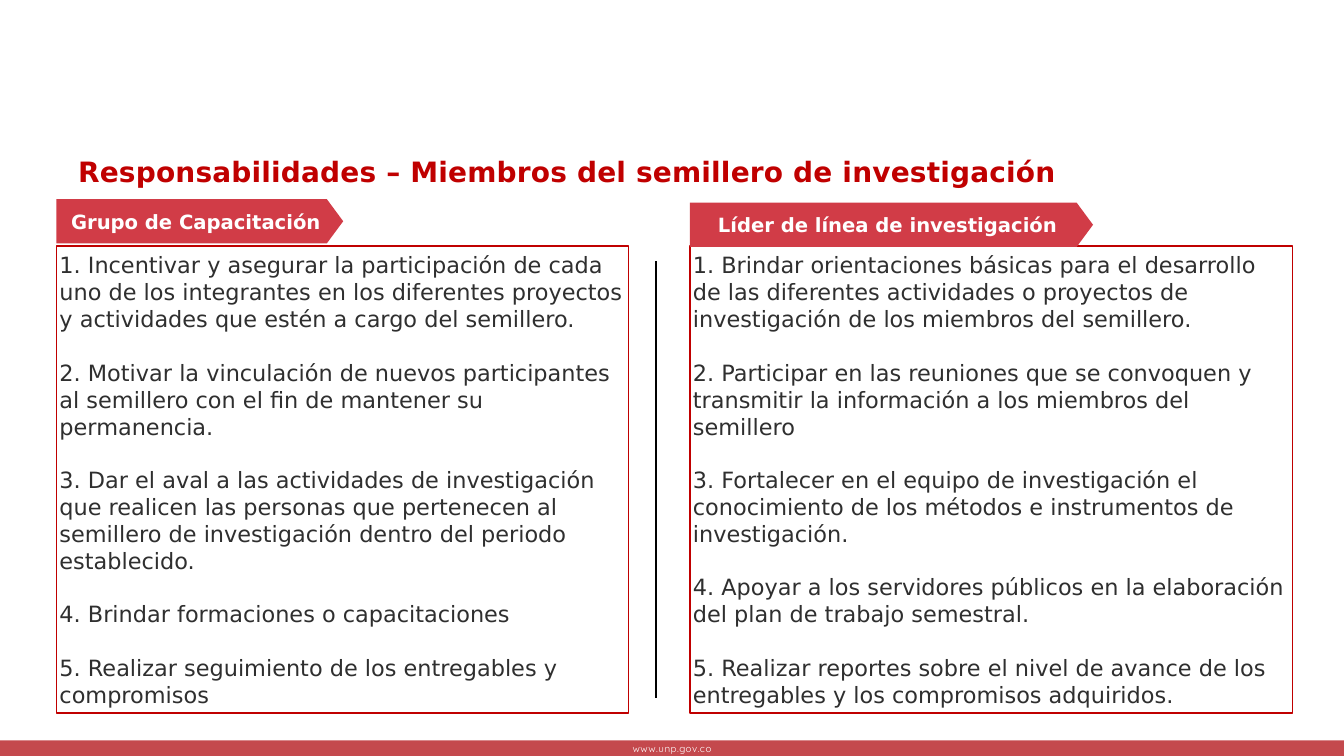
from dataclasses import dataclass

from pptx import Presentation
from pptx.dml.color import RGBColor
from pptx.enum.shapes import MSO_CONNECTOR, MSO_SHAPE
from pptx.enum.text import MSO_ANCHOR, MSO_AUTO_SIZE, PP_ALIGN
from pptx.oxml.ns import qn
from pptx.util import Pt
from lxml import etree

RECT, PENTAGON = MSO_SHAPE.RECTANGLE, MSO_SHAPE.PENTAGON
STRAIGHT = MSO_CONNECTOR.STRAIGHT
TOP, MIDDLE = MSO_ANCHOR.TOP, MSO_ANCHOR.MIDDLE
LEFT, CENTER, JUSTIFY = PP_ALIGN.LEFT, PP_ALIGN.CENTER, PP_ALIGN.JUSTIFY
NO_AUTOSIZE = MSO_AUTO_SIZE.NONE

PX = 9144  # 100 px to the inch
FONT = "DejaVu Sans"
COLORS = {
    "title": "C00000",
    "border": "C00000",
    "tag": "D13C47",
    "footer": "C4494D",
    "body": "2F2F2F",
    "white": "FFFFFF",
    "black": "000000",
}
BOX_TOP, BOX_HEIGHT, TAG_HEIGHT = 488, 927, 88


@dataclass
class Column:
    left: int
    width: int
    tag_top: int
    tag_width: int
    heading: str
    duties: list[str]


COLUMNS = [
    Column(112, 1135, 395, 569, "Grupo de Capacitación", [
        "Incentivar y asegurar la participación de cada uno de los integrantes "
        "en los diferentes proyectos y actividades que estén a cargo del semillero.",
        "Motivar la vinculación de nuevos participantes al semillero con el fin "
        "de mantener su permanencia.",
        "Dar el aval a las actividades de investigación que realicen las personas "
        "que pertenecen al semillero de investigación dentro del periodo establecido.",
        "Brindar formaciones o capacitaciones",
        "Realizar seguimiento de los entregables y compromisos",
    ]),
    Column(1369, 1196, 402, 800, "Líder de línea de investigación", [
        "Brindar orientaciones básicas para el desarrollo de las diferentes "
        "actividades o proyectos de investigación de los miembros del semillero.",
        "Participar en las reuniones que se convoquen y transmitir la información "
        "a los miembros del semillero",
        "Fortalecer en el equipo de investigación el conocimiento de los métodos "
        "e instrumentos de investigación.",
        "Apoyar a los servidores públicos en la elaboración del plan de trabajo "
        "semestral.",
        "Realizar reportes sobre el nivel de avance de los entregables y los "
        "compromisos adquiridos.",
    ]),
]


def px(*lengths: int) -> list[int]:
    return [n * PX for n in lengths]


def rgb(name: str) -> RGBColor:
    return RGBColor.from_string(COLORS[name])


def write(sp, *paragraphs: str, size: int, color: str, font: str = FONT,
          bold: bool = False, align=LEFT, anchor=MIDDLE, inset: int = 6,
          wrap: bool = True, gap: int = 0, tracking: int = 0,
          line_spacing: int | None = None) -> None:
    """Fill a shape with text; gap is in points, tracking in 1/100 point."""
    tf = sp.text_frame
    tf.auto_size = NO_AUTOSIZE
    tf.word_wrap = wrap
    tf.vertical_anchor = anchor
    tf.margin_left = tf.margin_top = tf.margin_right = tf.margin_bottom = inset * PX
    for i, text in enumerate(paragraphs):
        p = tf.add_paragraph() if i else tf.paragraphs[0]
        p.alignment = align
        p.space_before = Pt(gap if i else 0)
        if line_spacing:
            p.line_spacing = Pt(line_spacing)
        r = p.add_run()
        r.text = text
        r.font.name, r.font.size, r.font.bold = font, Pt(size), bold
        r.font.color.rgb = rgb(color)
        if tracking:
            r.font._element.set("spc", str(tracking))


def add_block(s, kind, left: int, top: int, width: int, height: int,
              fill: str, line: str | None = None):
    sp = s.shapes.add_shape(kind, *px(left, top, width, height))
    sp.shadow.inherit = False
    sp.fill.solid()
    sp.fill.fore_color.rgb = rgb(fill)
    if line:
        sp.line.color.rgb = rgb(line)
        sp.line.width = Pt(2)
    else:
        sp.line.fill.background()
    return sp


def add_column(s, col: Column) -> None:
    box = add_block(s, RECT, col.left, BOX_TOP, col.width, BOX_HEIGHT, "white", "border")
    duties = [f"{n}. {duty}" for n, duty in enumerate(col.duties, 1)]
    write(box, *duties, size=32, color="body", gap=38)
    tag = add_block(s, PENTAGON, col.left, col.tag_top, col.tag_width, TAG_HEIGHT, "tag")
    tag.adjustments[0] = 0.37
    write(tag, col.heading, size=28, color="white", bold=True, align=CENTER, wrap=False)


def add_divider(s, x: int, top: int, bottom: int) -> None:
    line = s.shapes.add_connector(STRAIGHT, *px(x, top, x, bottom))
    line.line.color.rgb = rgb("black")
    line.line.width = Pt(2)
    etree.SubElement(line._element.spPr, qn("a:effectLst"))


def add_footer(s) -> None:
    add_block(s, RECT, 0, 1469, 2667, 33, "footer")
    address = s.shapes.add_textbox(*px(1248, 1467, 171, 38))
    write(address, "www.unp.gov.co", size=14, color="white", font="Quicksand",
          align=CENTER, wrap=False, tracking=70)


def main() -> None:
    prs = Presentation()
    prs.slide_width, prs.slide_height = px(2667, 1500)
    s = prs.slides.add_slide(prs.slide_layouts[5])

    add_footer(s)
    title = s.shapes.title
    title.left, title.top, title.width, title.height = px(155, 323, 2043, 50)
    write(title, "Responsabilidades – Miembros del semillero de investigación",
          size=40, color="title", bold=True, align=JUSTIFY, anchor=TOP,
          inset=0, tracking=30, line_spacing=36)
    for col in COLUMNS:
        add_column(s, col)
    add_divider(s, 1302, 518, 1385)

    prs.save("out.pptx")


if __name__ == "__main__":
    main()
